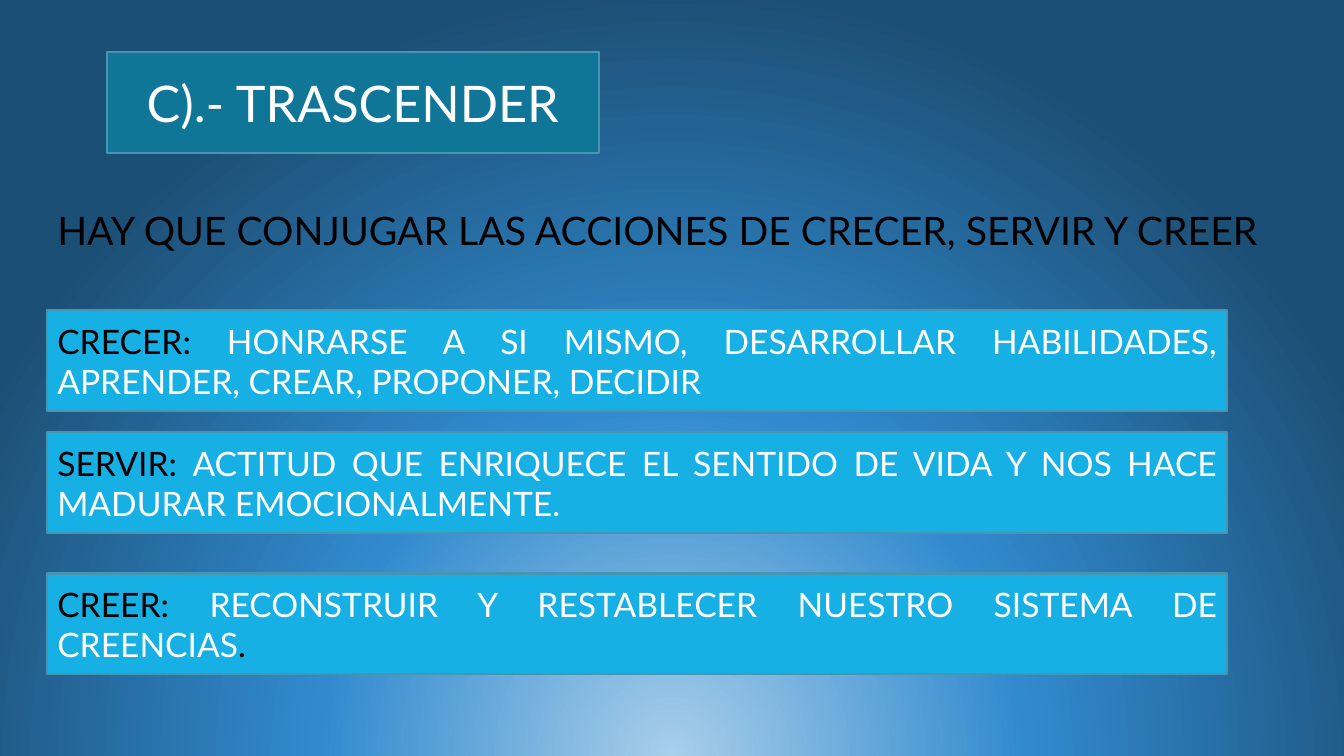
from lxml import etree
from pptx import Presentation
from pptx.dml.color import RGBColor
from pptx.enum import shapes, text
from pptx.oxml import parse_xml
from pptx.oxml.ns import nsdecls
from pptx.util import Inches, Pt

COLORS = {
    "black": "000000", "white": "FFFFFF",
    "teal": "0F7698", "sky": "17B0E4", "border": "4696B1",
}
GLOW = [(0, "A8CEEA"), (46, "318ACE"), (100, "1C4F75")]
FONT = "Lato"

TITLE = "C).- TRASCENDER"
LEAD = "HAY QUE CONJUGAR LAS ACCIONES DE CRECER, SERVIR Y CREER"
# Top of each card, then its text as (words, color)
ACTIONS = [
    (3.08, [("CRECER:", "black"),
            (" HONRARSE A SI MISMO, DESARROLLAR HABILIDADES, "
             "APRENDER, CREAR, PROPONER, DECIDIR", "white")]),
    (4.29, [("SERVIR: ", "black"),
            ("ACTITUD QUE ENRIQUECE EL SENTIDO DE VIDA Y NOS HACE "
             "MADURAR EMOCIONALMENTE.", "white")]),
    (5.69, [("CREER: ", "black"),
            ("RECONSTRUIR Y RESTABLECER NUESTRO SISTEMA DE CREENCIAS", "white"),
            (".", "black")]),
]
LEFT, CARD_WIDTH, BOX_HEIGHT = 0.47, 11.7, 1


def rgb(name):
    return RGBColor.from_string(COLORS[name])


def write(box, spans, size, align=text.PP_ALIGN.LEFT,
          anchor=text.MSO_ANCHOR.TOP, fit=text.MSO_AUTO_SIZE.NONE):
    frame = box.text_frame
    frame.word_wrap = True
    frame.auto_size = fit
    frame.vertical_anchor = anchor
    para = frame.paragraphs[0]
    para.alignment = align
    for words, color in spans:
        span = para.add_run()
        span.text = words
        span.font.name = FONT
        span.font.size = Pt(size)
        span.font.color.rgb = rgb(color)


def add_panel(page, left, top, width, fill, spans, size, align):
    panel = page.shapes.add_shape(
        shapes.MSO_SHAPE.RECTANGLE,
        Inches(left), Inches(top), Inches(width), Inches(BOX_HEIGHT))
    panel.shadow.inherit = False
    panel.fill.solid()
    panel.fill.fore_color.rgb = rgb(fill)
    panel.line.color.rgb = rgb(border_name)
    panel.line.width = Pt(1.5)
    write(panel, spans, size, align, text.MSO_ANCHOR.MIDDLE)


def paint_background(page):
    page.background.fill.gradient()
    blank = page.element.xpath(".//p:bg//a:gradFill")[0]
    stops = "".join(
        f'<a:gs pos="{place * 1000}"><a:srgbClr val="{color}"/></a:gs>'
        for place, color in GLOW)
    glow = parse_xml(
        f'<a:gradFill {nsdecls("a")} rotWithShape="1"><a:gsLst>{stops}</a:gsLst>'
        '<a:path path="circle">'
        '<a:fillToRect l="50000" t="130000" r="50000" b="-30000"/>'
        '</a:path></a:gradFill>')
    blank.getparent().replace(blank, glow)


border_name = "border"
deck = Presentation()
deck.slide_width, deck.slide_height = Inches(13.33), Inches(7.5)
page = deck.slides.add_slide(deck.slide_layouts[6])
paint_background(page)

# Title panel
add_panel(page, 1.06, 0.52, 4.88, "teal", [(TITLE, "white")], 36,
          text.PP_ALIGN.CENTER)

# Lead sentence
lead = page.shapes.add_textbox(Inches(LEFT), Inches(2), Inches(12.47), Inches(0.57))
write(lead, [(LEAD, "black")], 28, fit=text.MSO_AUTO_SIZE.SHAPE_TO_FIT_TEXT)

# One card per action
for top, spans in ACTIONS:
    add_panel(page, LEFT, top, CARD_WIDTH, "sky", spans, 24,
              text.PP_ALIGN.JUSTIFY)

deck.save("out.pptx")
